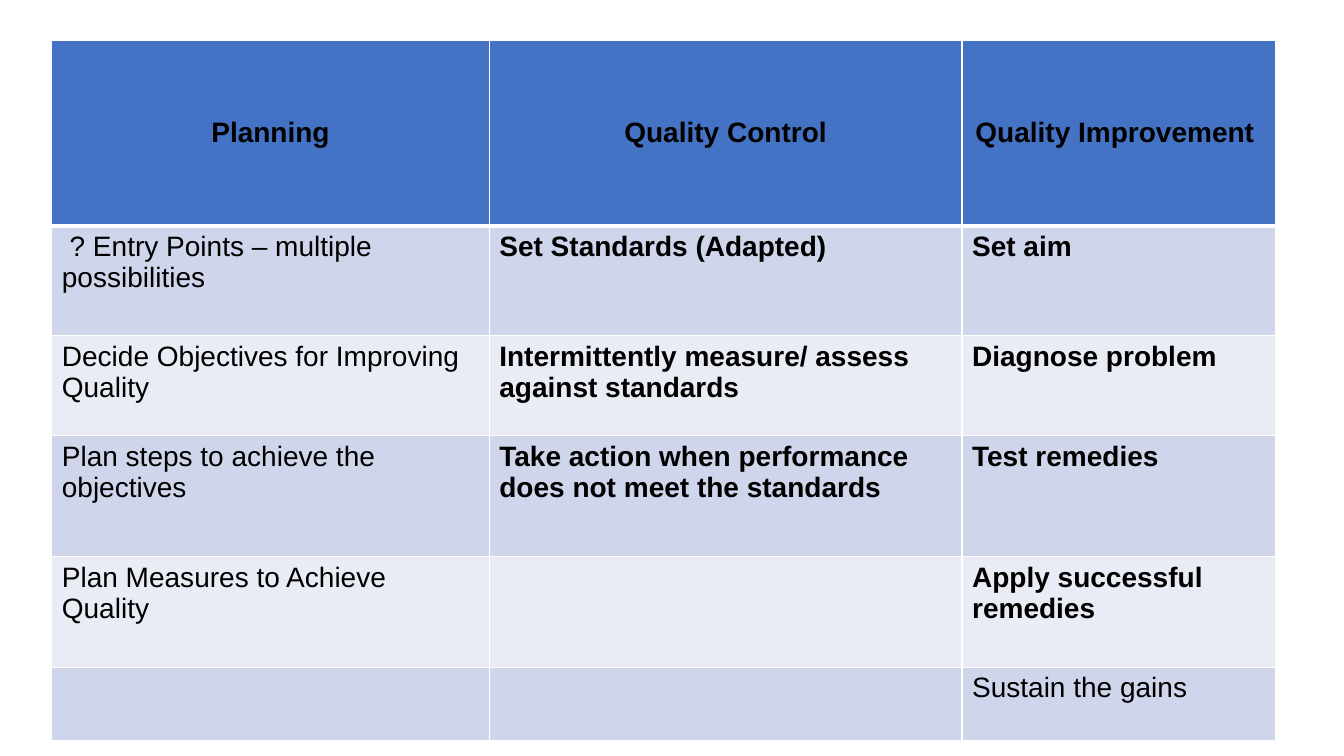
import pptx
import pptx.util
import pptx.dml.color
import pptx.enum.text
import pptx.oxml
import pptx.oxml.ns

Pt = pptx.util.Pt
RGBColor = pptx.dml.color.RGBColor
BLACK = RGBColor(0x00, 0x00, 0x00)
WHITE = RGBColor(0xFF, 0xFF, 0xFF)
HEADER_BLUE = RGBColor(0x44, 0x72, 0xC4)
BANDS = [RGBColor(0xE9, 0xEB, 0xF5), RGBColor(0xCF, 0xD5, 0xEA)]

COL_WIDTHS = [312.5, 337.7, 224]
ROW_HEIGHTS = [132.3, 78.5, 71.5, 86.4, 79, 52.5]
ROWS = [
    ["Planning", "Quality Control", "Quality Improvement "],
    [" ? Entry Points – multiple possibilities", "Set Standards (Adapted)", "Set aim"],
    ["Decide Objectives for Improving Quality",
     "Intermittently measure/ assess against standards", "Diagnose problem"],
    ["Plan steps to achieve the objectives",
     "Take action when performance does not meet the standards", "Test remedies"],
    ["Plan Measures to Achieve Quality", "", "Apply successful remedies"],
    ["", "", "Sustain the gains"],
]
PLAIN_EDGED = {(2, 1), (3, 1)}  # text without an outline


def line_xml(tag, width, color):
    return pptx.oxml.parse_xml(
        f'<a:{tag} {pptx.oxml.ns.nsdecls("a")} w="{Pt(width)}">'
        f'<a:solidFill><a:srgbClr val="{color}"/></a:solidFill></a:{tag}>')


def set_borders(cell, widths):
    tcPr = cell._tc.get_or_add_tcPr()
    for i, (side, width) in enumerate(widths.items()):
        tcPr.insert(i, line_xml("ln" + side, width, WHITE))


def write_cell(cell, text, bold, outlined):
    p = cell.text_frame.paragraphs[0]
    if not text:
        p.font.size = Pt(20)
        return
    r = p.add_run()
    r.text = text
    for name, value in {"size": Pt(20), "name": "Arial", "bold": bold}.items():
        setattr(r.font, name, value)
    r.font.color.rgb = BLACK
    if outlined:
        r._r.get_or_add_rPr().insert(0, line_xml("ln", 0.75, BLACK))


def format_header(cell):
    header_format = {
        "vertical_anchor": pptx.enum.text.MSO_ANCHOR.MIDDLE,
        "margin_left": Pt(5), "margin_right": Pt(5),
        "margin_top": Pt(0), "margin_bottom": Pt(0),
    }
    for name, value in header_format.items():
        setattr(cell, name, value)
    p = cell.text_frame.paragraphs[0]
    p.alignment = pptx.enum.text.PP_ALIGN.CENTER
    p.space_after = Pt(12)


def add_quality_table(s, left, top):
    table = s.shapes.add_table(
        len(ROWS), len(COL_WIDTHS), Pt(left), Pt(top),
        Pt(sum(COL_WIDTHS)), Pt(sum(ROW_HEIGHTS))).table
    for column, width in zip(table.columns, COL_WIDTHS):
        column.width = Pt(width)
    for row, height in zip(table.rows, ROW_HEIGHTS):
        row.height = Pt(height)

    last_row = len(ROWS) - 1
    for i, texts in enumerate(ROWS):
        for j, text in enumerate(texts):
            cell = table.cell(i, j)
            is_header = i == 0
            # The first column and the last row are in regular weight
            bold = is_header or (j > 0 and i < last_row)
            write_cell(cell, text, bold, (i, j) not in PLAIN_EDGED)
            if is_header:
                format_header(cell)
            cell.fill.solid()
            cell.fill.fore_color.rgb = HEADER_BLUE if is_header else BANDS[i % 2]
            set_borders(cell, {"L": 1, "R": 1, "T": 3 if i == 1 else 1,
                               "B": 3 if is_header else 1})


def main():
    prs = pptx.Presentation()
    prs.slide_width, prs.slide_height = Pt(960), Pt(540)
    s = prs.slides.add_slide(prs.slide_layouts[6])
    add_quality_table(s, 37, 29)
    prs.save("out.pptx")


if __name__ == "__main__":
    main()
